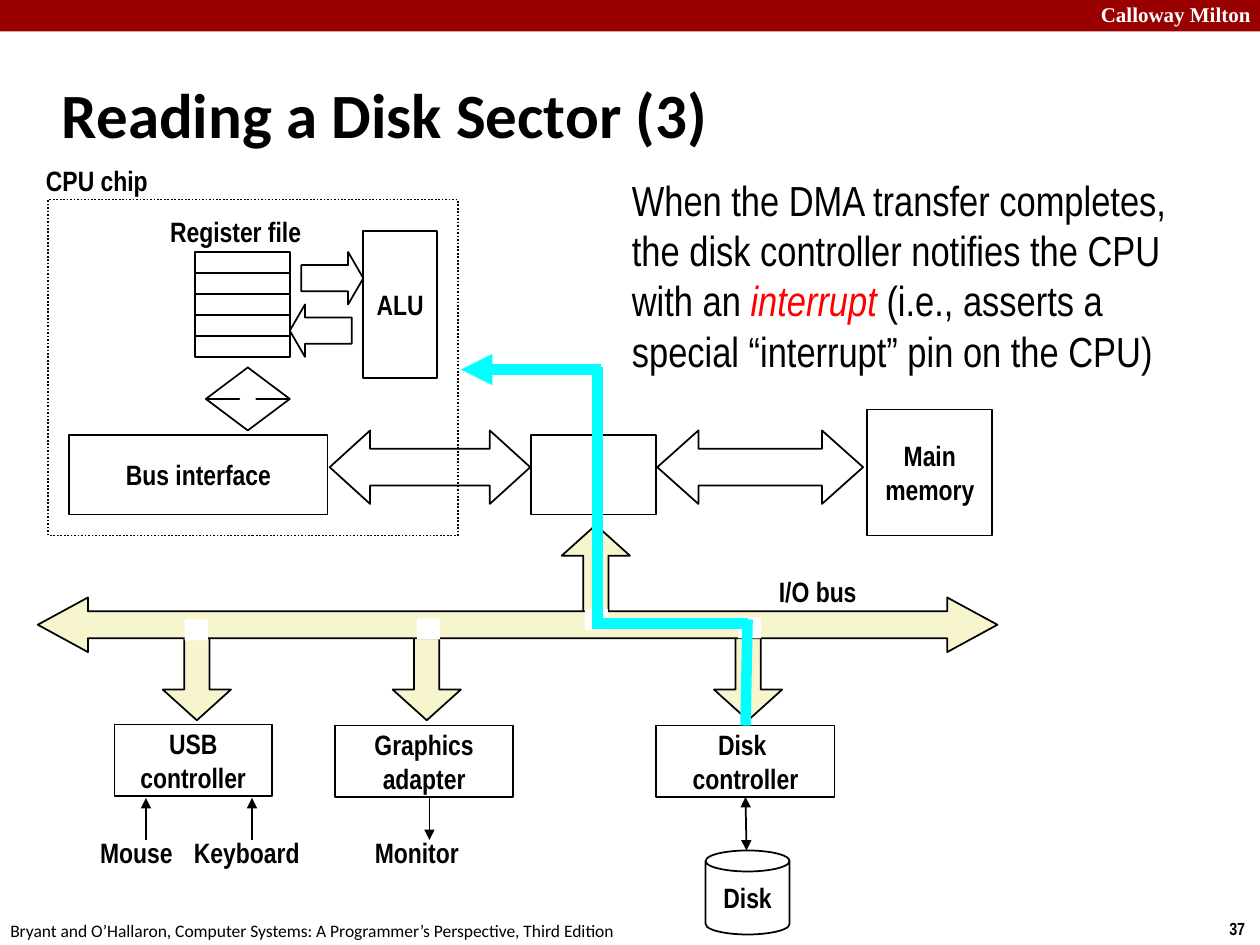
from lxml import etree
from pptx import Presentation, util as u
from pptx.dml.color import RGBColor
from pptx.enum import dml, shapes, text
from pptx.oxml.ns import qn

HUE = {"ink": "000000", "band": "990000", "white": "FFFFFF",
       "bus": "F7F5CD", "path": "00FFFF", "alert": "FF0000"}
BOX = shapes.MSO_SHAPE
MID = text.PP_ALIGN.CENTER
LEFT = text.PP_ALIGN.LEFT
NARROW = "Arial Narrow"

prs = Presentation()
prs.slide_width, prs.slide_height = u.Inches(10), u.Inches(7.5)
COL, ROW = prs.slide_width / 120, prs.slide_height / 90  # 120 x 90 grid
slide = prs.slides.add_slide(prs.slide_layouts[5])
pool = slide.shapes


def write(item, lines, size=16, bold=True, font=NARROW, align=MID,
          anchor=text.MSO_ANCHOR.MIDDLE, wrap=False):
    """Fill a shape with lines, each a list of (words, colour, italic)."""
    frame = item.text_frame
    frame.word_wrap, frame.vertical_anchor = wrap, anchor
    frame.auto_size = text.MSO_AUTO_SIZE.NONE
    for n, line in enumerate(lines):
        para = frame.add_paragraph() if n else frame.paragraphs[0]
        para.alignment = align
        for words, hue, slant in line:
            run = para.add_run()
            run.text = words
            run.font.name, run.font.size = font, u.Pt(size)
            run.font.bold, run.font.italic = bold, slant
            run.font.color.rgb = RGBColor.from_string(HUE[hue])


def draw(kind, x, y, w, h, fill=None, line="ink", adj=(), label=()):
    """Place a preset shape on the grid."""
    item = pool.add_shape(kind, *map(round, (x * COL, y * ROW, w * COL, h * ROW)))
    item.shadow.inherit = False
    if fill:
        item.fill.solid()
        item.fill.fore_color.rgb = RGBColor.from_string(HUE[fill])
    else:
        item.fill.background()
    if line:
        item.line.color.rgb = RGBColor.from_string(HUE[line])
        item.line.width = u.Pt(1)
    else:
        item.line.fill.background()
    for n, part in enumerate(adj):
        item.adjustments[n] = part
    if label:
        write(item, [[(words, "ink", False)] for words in label])
    return item


# Title and header band
title = pool.title
title.left, title.top = round(4.7 * COL), round(5.8 * ROW)
title.width, title.height = round(99.6 * COL), round(10 * ROW)
write(title, [[("Reading a Disk Sector (3)", "ink", False)]], 36, font="Calibri",
      align=LEFT, wrap=True)
draw(BOX.RECTANGLE, 0, 0, 120, 3, "band", None)

# Memory, bridge and the buses between them
draw(BOX.RECTANGLE, 82.6, 39, 11.9, 12, label=("Main", "memory"))
draw(BOX.LEFT_RIGHT_ARROW, 62.6, 41, 19.6, 7, adj=(0.5, 0.56))
draw(BOX.RECTANGLE, 50.6, 41.4, 11.9, 7.6)
draw(BOX.LEFT_RIGHT_ARROW, 31.4, 41, 19.1, 7, adj=(0.5, 0.55))

# CPU chip
for n in range(5):
    draw(BOX.RECTANGLE, 18.6, 24 + 2 * n, 9, 2)
draw(BOX.RIGHT_ARROW, 28.7, 24, 5.9, 5, adj=(0.5, 0.29))
draw(BOX.LEFT_ARROW, 27.6, 29, 5.9, 5, adj=(0.5, 0.29))
draw(BOX.RECTANGLE, 34.6, 22, 7, 14, label=("ALU",))
draw(BOX.UP_DOWN_ARROW, 19.6, 35, 8, 6, adj=(0.5, 0.2))
chip = draw(BOX.RECTANGLE, 4.6, 19, 39, 32)
chip.line.dash_style = dml.MSO_LINE.ROUND_DOT

# I/O bus branches and devices
draw(BOX.UP_ARROW, 53.5, 50, 6.5, 9, "bus", adj=(0.37, 0.45))
for x in (15.5, 37.4, 68):
    draw(BOX.DOWN_ARROW, x, 59.6, 6.5, 9, "bus", adj=(0.37, 0.45))
draw(BOX.RECTANGLE, 10.9, 69, 15, 6.8, label=("USB", "controller"))
draw(BOX.RECTANGLE, 31.9, 69.1, 17, 6.8, label=("Graphics", "adapter"))
disk = draw(BOX.RECTANGLE, 62.5, 69.1, 17, 6.8, label=("Disk ", "controller"))
draw(BOX.CAN, 67.2, 81, 8, 8, adj=(0.25,), label=("Disk",))
draw(BOX.LEFT_RIGHT_ARROW, 3.6, 56.9, 91.4, 5.2, "bus", adj=(0.49, 0.92))

# White patches over the bus joints
for x, y in ((17.6, 59), (39.7, 58.9), (70.3, 58.8), (55.7, 58)):
    draw(BOX.RECTANGLE, x, y, 2.2, 2, "white", None)

# Device arrows, then the interrupt path: ends, colour, width, heads, joints
for x1, y1, x2, y2, hue, width, heads, start, end in (
        (13.9, 76, 13.9, 80, "ink", 1, ("head",), None, None),
        (24, 76, 24, 80, "ink", 1, ("head",), None, None),
        (40.9, 76, 40.9, 80, "ink", 1, ("tail",), None, None),
        (71, 75.9, 71.1, 81, "ink", 1, ("head", "tail"), disk, None),
        (57.2, 35.2, 43.9, 35.2, "path", 6, ("tail",), None, None),
        (56.9, 35, 56.9, 59, "path", 6, (), None, None),
        (56.4, 59.4, 71.2, 59.4, "path", 6, (), None, None),
        (71.2, 59, 71, 69.1, "path", 6, (), None, disk)):
    link = pool.add_connector(shapes.MSO_CONNECTOR.STRAIGHT, round(x1 * COL),
                              round(y1 * ROW), round(x2 * COL), round(y2 * ROW))
    link.line.color.rgb = RGBColor.from_string(HUE[hue])
    link.line.width = u.Pt(width)
    if start:
        link.begin_connect(start, 2)
    if end:
        link.end_connect(end, 0)
    for side in heads:
        etree.SubElement(link.line._get_or_add_ln(), qn(f"a:{side}End"), type="triangle")
    etree.SubElement(link._element.spPr, qn("a:effectLst"))

draw(BOX.RECTANGLE, 6.6, 41.4, 24.6, 7.6, label=("Bus interface",))

# Labels, explanation and footer: place, runs, format
TOP = text.MSO_ANCHOR.TOP
note = [("When the DMA transfer completes, the disk controller notifies the CPU with an ",
         "ink", False),
        ("interrupt", "alert", True),
        (" (i.e., asserts a special “interrupt” pin on the CPU)", "ink", False)]
book = ("Bryant and O’Hallaron, Computer Systems: "
        "A Programmer’s Perspective, Third Edition")
for place, runs, style in (
        ((14.9, 19.8, 15.1, 4.4), [("Register file", "ink", False)], {}),
        ((3.2, 15, 14.3, 4.4), [("CPU chip", "ink", False)], {"align": LEFT}),
        ((8.3, 79, 9.4, 4.4), [("Mouse", "ink", False)], {}),
        ((17.2, 79, 12.6, 4.4), [("Keyboard", "ink", False)], {}),
        ((34.4, 79, 10.6, 4.4), [("Monitor", "ink", False)], {}),
        ((73, 54.1, 11.5, 4.4), [("I/O bus", "ink", False)], {"align": LEFT}),
        ((59, 16, 57, 20.6), note,
         {"size": 24, "bold": False, "align": LEFT, "anchor": TOP, "wrap": True}),
        ((100, -0.4, 120.3 - 100, 3.6), [("Calloway Milton", "white", False)],
         {"size": 12, "font": "Times New Roman", "align": text.PP_ALIGN.RIGHT,
          "anchor": TOP, "wrap": True}),
        ((115.9, 86.8, 4.1, 3.2), [("37", "ink", False)],
         {"size": 10, "align": LEFT, "anchor": TOP}),
        ((-0.2, 87, 61, 3.2), [(book, "ink", False)],
         {"size": 10, "bold": False, "font": "Calibri", "align": LEFT, "anchor": TOP})):
    x, y, w, h = place
    field = pool.add_textbox(round(x * COL), round(y * ROW), round(w * COL), round(h * ROW))
    write(field, [runs], **style)

prs.save("out.pptx")
